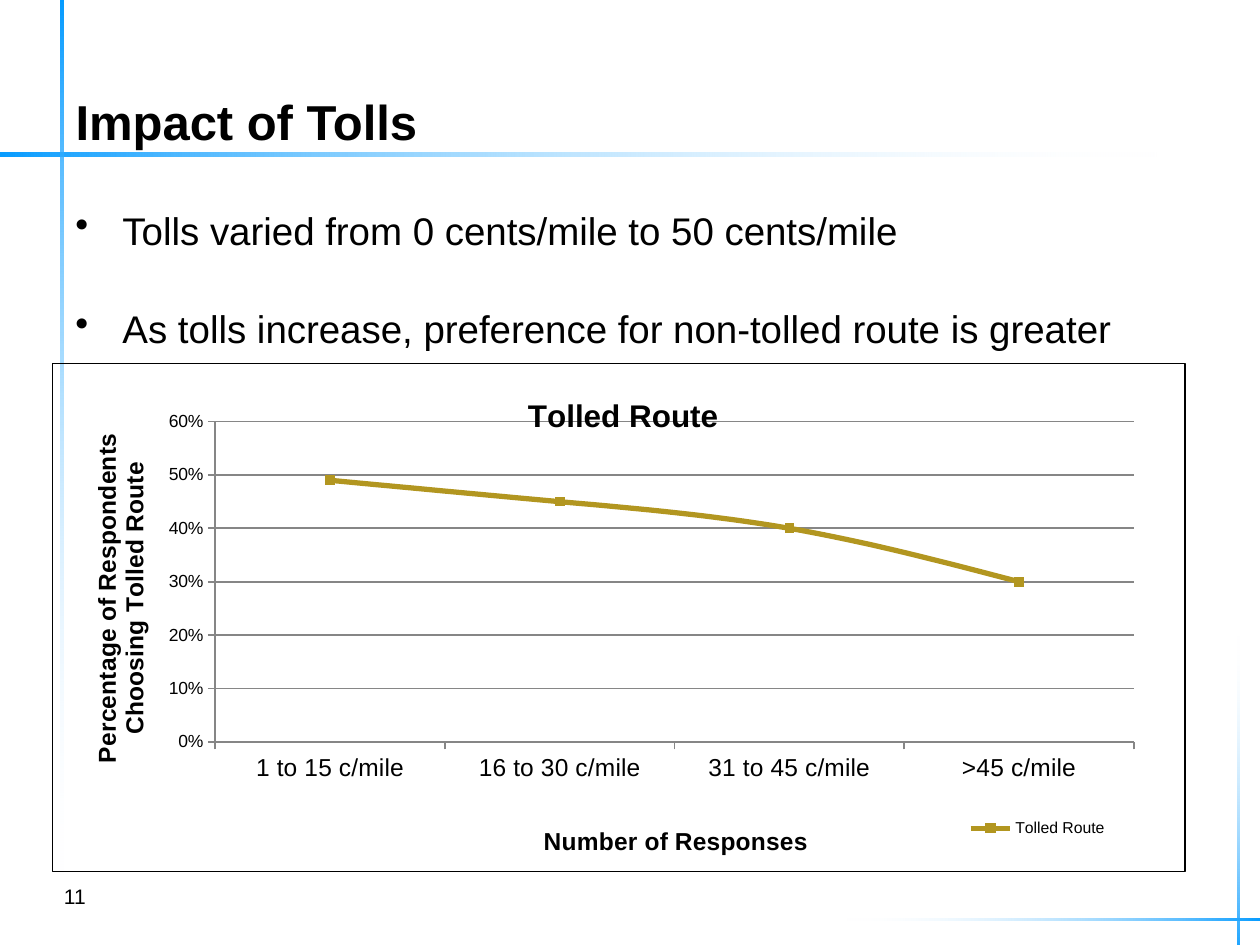
from lxml import etree
from pptx import Presentation
from pptx.chart.data import CategoryChartData
from pptx.dml.color import RGBColor
from pptx.enum.chart import XL_CHART_TYPE, XL_LEGEND_POSITION, XL_MARKER_STYLE, XL_TICK_MARK
from pptx.enum.shapes import MSO_SHAPE
from pptx.enum.text import MSO_ANCHOR, MSO_AUTO_SIZE, PP_ALIGN
from pptx.oxml import parse_xml
from pptx.oxml.ns import nsdecls, qn
from pptx.util import Cm, Pt

RECTANGLE = MSO_SHAPE.RECTANGLE
LINE_MARKERS = XL_CHART_TYPE.LINE_MARKERS
SQUARE = XL_MARKER_STYLE.SQUARE
OUTSIDE = XL_TICK_MARK.OUTSIDE
RIGHT = XL_LEGEND_POSITION.RIGHT
BOTTOM, MIDDLE = MSO_ANCHOR.BOTTOM, MSO_ANCHOR.MIDDLE
LEFT = PP_ALIGN.LEFT
NO_AUTOFIT = MSO_AUTO_SIZE.NONE

FONT = "Arial"
COLORS = {"text": "000000", "rule": "0099FF", "fade": "FFFFFF",
          "tolled": "B29620", "grid": "868686"}


def style(font, size, bold=False):
    font.name = FONT
    font.size = Pt(size)
    font.bold = bold
    font.color.rgb = RGBColor.from_string(COLORS["text"])


def place(part, **fractions):
    """Give a chart part a manual layout in fractions of the chart."""
    for old in part.findall(qn("c:layout")):
        part.remove(old)
    modes = {"x": "edge", "y": "edge"}
    values = "".join(f'<c:{key}Mode val="{mode}"/>' for key, mode in modes.items())
    values += "".join(f'<c:{key} val="{value}"/>' for key, value in fractions.items())
    target = '<c:layoutTarget val="inner"/>' if part.tag == qn("c:plotArea") else ""
    layout = parse_xml(f'<c:layout {nsdecls("c")}><c:manualLayout>{target}{values}'
                       '</c:manualLayout></c:layout>')
    leading = [child for child in part if child.tag in (qn("c:tx"), qn("c:legendPos"))]
    part.insert(len(leading), layout)


prs = Presentation()
prs.slide_width, prs.slide_height = Cm(25.4), Cm(19.05)
slide = prs.slides.add_slide(prs.slide_layouts[5])

# Fading rules: centre x, centre y, length, thickness, rotation
rules = [
    (11.51, 3.12, 23.88, 0.08, 270),
    (1.25, 8.75, 17.96, 0.06, 0),
    (21.3, 18.53, 8.51, 0.04, 90),
    (24.96, 16.15, 6.71, 0.04, 180),
]
for x, y, length, thickness, rotation in rules:
    rule = slide.shapes.add_shape(RECTANGLE, Cm(x - thickness / 2), Cm(y - length / 2),
                                  Cm(thickness), Cm(length))
    rule.rotation = rotation
    rule.shadow.inherit = False
    rule.line.fill.background()
    rule.fill.gradient()
    rule.fill.gradient_angle = 270
    solid, clear = rule.fill.gradient_stops
    solid.color.rgb = RGBColor.from_string(COLORS["rule"])
    clear.color.rgb = RGBColor.from_string(COLORS["fade"])
    solid.position, clear.position = 0, 1
    fade_color = clear._gs.find(qn("a:srgbClr"))
    etree.SubElement(fade_color, qn("a:alpha")).set("val", "0")

# Title
title = slide.shapes.title
title.left, title.top, title.width, title.height = Cm(1.27), Cm(-0.03), Cm(22.86), Cm(3.18)
title.text_frame.vertical_anchor = BOTTOM
title.text_frame.auto_size = NO_AUTOFIT
heading = title.text_frame.paragraphs[0]
heading.alignment = LEFT
run = heading.add_run()
run.text = "Impact of Tolls"
style(run.font, 28, bold=True)

# Slide number
number = slide.shapes.add_textbox(Cm(1.04), Cm(17.55), Cm(1.85), Cm(1.02)).text_frame
number.word_wrap = True
number.vertical_anchor = MIDDLE
run = number.paragraphs[0].add_run()
run.text = "11"
style(run.font, 12)

# Chart of tolled route choice
data = CategoryChartData(number_format="0%")
data.categories = ["1 to 15 c/mile", "16 to 30 c/mile", "31 to 45 c/mile", ">45 c/mile"]
data.add_series("Tolled Route", [0.49, 0.45, 0.4, 0.3])
chart = slide.shapes.add_chart(LINE_MARKERS, Cm(1.04), Cm(7.32), Cm(22.86), Cm(10.26),
                               data).chart
style(chart.font, 10)
chart.plots[0].vary_by_categories = False
place(chart._chartSpace.chart.plotArea, x=0.144, y=0.114, w=0.811, h=0.631)
chart._chartSpace.chart.addnext(parse_xml(
    f'<c:spPr {nsdecls("c", "a")}><a:noFill/><a:ln w="{Pt(0.75)}"><a:solidFill>'
    f'<a:srgbClr val="{COLORS["text"]}"/></a:solidFill></a:ln></c:spPr>'))

tolled = chart.plots[0].series[0]
tolled.smooth = True
tolled.format.line.width = Pt(3)
tolled.marker.style = SQUARE
tolled.marker.size = 5
for line_format in (tolled.format.line, tolled.marker.format.line):
    line_format.color.rgb = RGBColor.from_string(COLORS["tolled"])
tolled.marker.format.fill.solid()
tolled.marker.format.fill.fore_color.rgb = RGBColor.from_string(COLORS["tolled"])

responses, share = chart.category_axis, chart.value_axis
share.minimum_scale, share.maximum_scale, share.major_unit = 0, 0.6, 0.1
share.tick_labels.number_format = "0%"
share.tick_labels.number_format_is_linked = False
share.has_major_gridlines = True
for axis, size in ((responses, 14), (share, 10)):
    axis.major_tick_mark = OUTSIDE
    style(axis.tick_labels.font, size)
for line_format in (responses.format.line, share.format.line,
                    share.major_gridlines.format.line):
    line_format.color.rgb = RGBColor.from_string(COLORS["grid"])
    line_format.width = Pt(1)

chart.has_title = True
captions = [
    (chart.chart_title, "Tolled Route", 18, 0.415, 0.05),
    (responses.axis_title, "Number of Responses", 14, 0.43, 0.9),
    (share.axis_title, "Percentage of Respondents Choosing Tolled Route", 14, 0.03, 0.13),
]
for caption, words, size, x, y in captions:
    run = caption.text_frame.paragraphs[0].add_run()
    run.text = words
    style(run.font, size, bold=True)
    place(caption._element, x=x, y=y)
share_body = share.axis_title.text_frame._txBody.bodyPr
share_body.set("rot", "-5400000")
share_body.set("vert", "horz")

chart.has_legend = True
chart.legend.position = RIGHT
chart.legend.include_in_layout = False
style(chart.legend.font, 9)
place(chart.legend._element, x=0.8, y=0.88, w=0.14, h=0.07)

# Findings
findings = slide.shapes.add_textbox(Cm(1.27), Cm(4.04), Cm(22.86), Cm(12.57)).text_frame
findings.word_wrap = True
points = ["Tolls varied from 0 cents/mile to 50 cents/mile",
          "As tolls increase, preference for non-tolled route is greater"]
for i, point in enumerate(points):
    paragraph = findings.add_paragraph() if i else findings.paragraphs[0]
    properties = paragraph._p.get_or_add_pPr()
    properties.set("marL", str(Cm(0.95)))
    properties.set("indent", str(Cm(-0.95)))
    etree.SubElement(properties, qn("a:buChar")).set("char", "•")
    if i:
        paragraph.space_before = Pt(30)
    run = paragraph.add_run()
    run.text = point
    style(run.font, 22)

prs.save("out.pptx")
